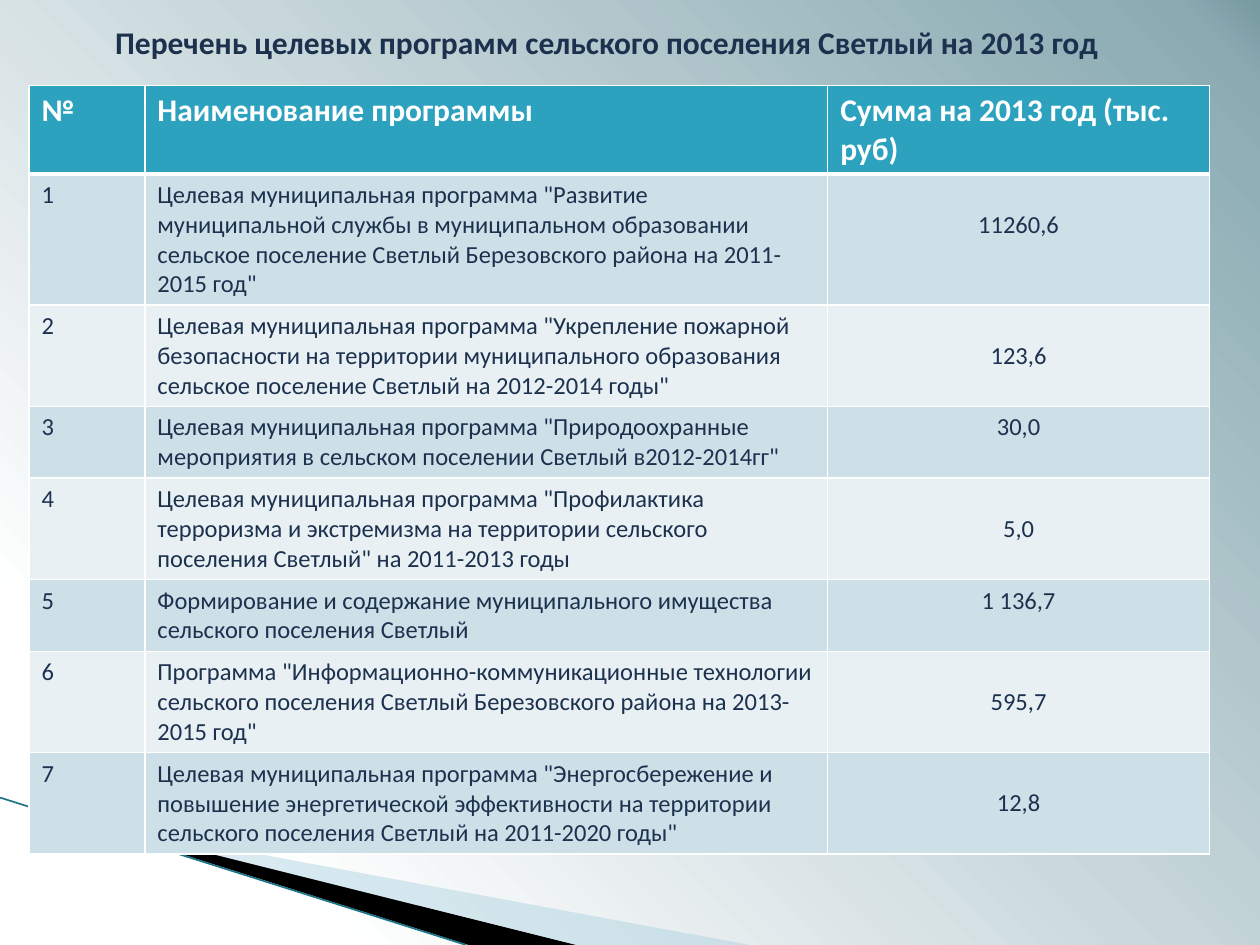
import pptx
import pptx.util
import pptx.dml.color
import pptx.enum.shapes
import pptx.enum.text
import pptx.oxml
import pptx.oxml.ns
import lxml.etree

Inches = pptx.util.Inches
Pt = pptx.util.Pt
qn = pptx.oxml.ns.qn
ALIGN = pptx.enum.text.PP_ALIGN

FONT = "Calibri"
NAVY, WHITE, BLACK = "1C314E", "FFFFFF", "000000"
HEADER_FILL = "2DA2BF"
BAND_FILLS = ("CDE0E8", "E8F0F4")
LINE_HEIGHT = 0.235
CELL_MARGIN = 0.05

TITLE = "Перечень целевых программ сельского поселения Светлый на 2013 год "
HEADERS = ("№", "Наименование программы", "Сумма на 2013 год (тыс. руб)")
# Programme name, sum, number of text lines, lines left free above the sum
PROGRAMMES = (
    ('Целевая муниципальная программа "Развитие муниципальной службы в муниципальном образовании '
     'сельское поселение Светлый Березовского района на 2011-2015 год"', "11260,6", 4, 1),
    ('Целевая муниципальная программа "Укрепление пожарной безопасности на территории '
     'муниципального образования сельское поселение Светлый на 2012-2014 годы"', "123,6", 3, 1),
    ('Целевая муниципальная программа "Природоохранные мероприятия в сельском поселении '
     'Светлый в2012-2014гг"', "30,0", 2, 0),
    ('Целевая муниципальная программа "Профилактика терроризма и экстремизма на территории '
     'сельского поселения Светлый" на 2011-2013 годы', "5,0", 3, 1),
    ("Формирование и содержание муниципального имущества сельского поселения Светлый",
     "1 136,7", 2, 0),
    ('Программа "Информационно-коммуникационные технологии сельского поселения Светлый '
     'Березовского района на 2013-2015 год"', "595,7", 3, 1),
    ('Целевая муниципальная программа "Энергосбережение и повышение энергетической эффективности '
     'на территории сельского поселения Светлый на 2011-2020 годы"', "12,8", 3, 1),
)


def rgb(value):
    return pptx.dml.color.RGBColor.from_string(value)


def add_color(parent, value):
    return lxml.etree.SubElement(parent, qn("a:srgbClr"), val=value)


def write(frame, text, size, color, bold=False, align=ALIGN.LEFT):
    para = frame.paragraphs[0]
    para.alignment = align
    span = para.add_run()
    span.text = text
    span.font.name = FONT
    span.font.size = Pt(size)
    span.font.bold = bold
    span.font.color.rgb = rgb(color)


def paint_background(page):
    fill = page.background.fill
    fill.gradient()
    fill.gradient_angle = 45
    stops = page.background._cSld.find(".//" + qn("a:gsLst"))
    for stop in list(stops):
        stops.remove(stop)
    for percent, color in ((15, WHITE), (96, "8BABB3"), (100, "7799A0")):
        add_color(lxml.etree.SubElement(stops, qn("a:gs"), pos=str(percent * 1000)), color)


def add_wedge(page, points, color, opacity=100):
    corners = [(Inches(x), Inches(y)) for x, y in points]
    builder = page.shapes.build_freeform(*corners[0])
    builder.add_line_segments(corners[1:], close=True)
    wedge = builder.convert_to_shape()
    wedge.shadow.inherit = False
    wedge.line.fill.background()
    wedge.fill.solid()
    wedge.fill.fore_color.rgb = rgb(color)
    if opacity < 100:
        tint = wedge._element.spPr.find(".//" + qn("a:srgbClr"))
        lxml.etree.SubElement(tint, qn("a:alpha"), val=str(opacity * 1000))


def add_corner_decoration(page):
    add_wedge(page, ((0.55, 6.5), (5.95, 7.5), (4.56, 7.5)), "A0CBDC", 40)
    add_wedge(page, ((0.53, 6.49), (4.57, 7.5), (3.72, 7.5)), BLACK)
    edge = page.shapes.add_connector(pptx.enum.shapes.MSO_CONNECTOR.STRAIGHT,
                                     Inches(0), Inches(6.33), Inches(3.7), Inches(7.5))
    edge.line.color.rgb = rgb("1B7587")
    edge.line.width = Pt(0.95)
    lxml.etree.SubElement(edge._element.spPr, qn("a:effectLst"))


def add_title(page, left, top, width, height):
    box = page.shapes.add_textbox(Inches(left), Inches(top), Inches(width), Inches(height))
    box.text_frame.word_wrap = True
    box.text_frame.auto_size = pptx.enum.text.MSO_AUTO_SIZE.SHAPE_TO_FIT_TEXT
    write(box.text_frame, TITLE, 18, NAVY, bold=True, align=ALIGN.CENTER)


def style_cell(cell, fill, top_border=1, bottom_border=1):
    """Fill the cell and give it white borders, widths in points."""
    properties = cell._tc.get_or_add_tcPr()
    for side, points in (("L", 1), ("R", 1), ("T", top_border), ("B", bottom_border)):
        border = lxml.etree.SubElement(properties, qn("a:ln" + side), w=str(Pt(points)))
        add_color(lxml.etree.SubElement(border, qn("a:solidFill")), WHITE)
    cell.fill.solid()
    cell.fill.fore_color.rgb = rgb(fill)
    cell.margin_top = cell.margin_bottom = Inches(CELL_MARGIN)


def add_programme_table(page, left, top, widths, header_height):
    heights = [header_height]
    heights += [2 * CELL_MARGIN + LINE_HEIGHT * lines for _, _, lines, _ in PROGRAMMES]
    table = page.shapes.add_table(len(heights), len(widths), Inches(left), Inches(top),
                                  Inches(sum(widths)), Inches(sum(heights))).table
    for column, width in zip(table.columns, widths):
        column.width = Inches(width)
    for row, height in zip(table.rows, heights):
        row.height = Inches(height)

    for column, header in enumerate(HEADERS):
        cell = table.cell(0, column)
        style_cell(cell, HEADER_FILL, bottom_border=3)
        write(cell.text_frame, header, 18, WHITE, bold=True)

    for number, (name, amount, _, free_lines) in enumerate(PROGRAMMES, 1):
        for column, text in enumerate((str(number), name, amount)):
            cell = table.cell(number, column)
            style_cell(cell, BAND_FILLS[(number - 1) % 2], top_border=3 if number == 1 else 1)
            is_amount = column == 2
            write(cell.text_frame, text, 14, NAVY,
                  align=ALIGN.CENTER if is_amount else ALIGN.LEFT)
            if is_amount:
                cell.margin_top = Inches(CELL_MARGIN + LINE_HEIGHT * free_lines)


def main():
    deck = pptx.Presentation()
    deck.slide_width, deck.slide_height = Inches(10), Inches(7.5)
    page = deck.slides.add_slide(deck.slide_layouts[6])
    paint_background(page)
    add_corner_decoration(page)
    add_title(page, 0.2, 0.13, 9.29, 0.4)
    add_programme_table(page, 0.23, 0.68, (0.92, 5.42, 3.03), 0.7)
    deck.save("out.pptx")


if __name__ == "__main__":
    main()
